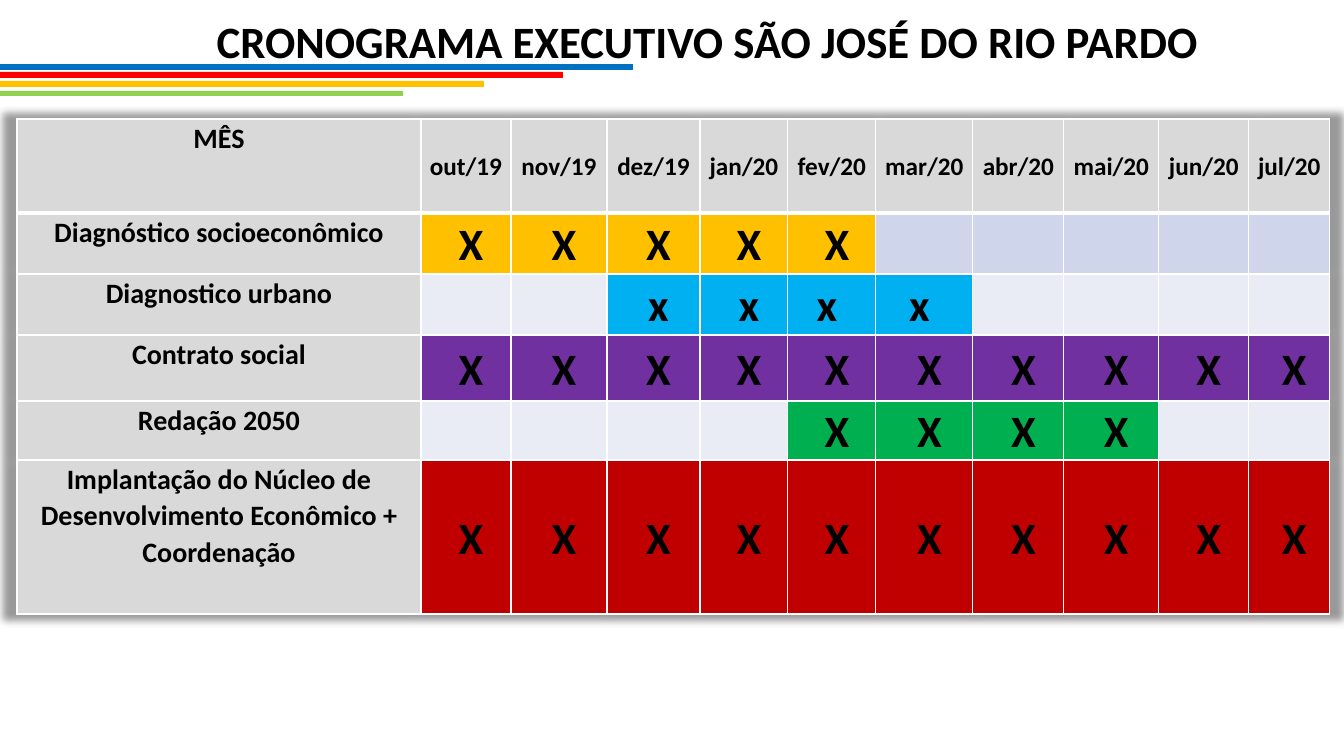
from lxml import etree
from pptx import Presentation
from pptx.dml.color import RGBColor
from pptx.enum.shapes import MSO_SHAPE
from pptx.enum.text import MSO_ANCHOR, MSO_AUTO_SIZE, PP_ALIGN
from pptx.oxml import parse_xml
from pptx.oxml.ns import nsdecls
from pptx.util import Emu, Pt

RECTANGLE = MSO_SHAPE.RECTANGLE
TOP, MIDDLE = MSO_ANCHOR.TOP, MSO_ANCHOR.MIDDLE
CENTER = PP_ALIGN.CENTER
NO_AUTOFIT = MSO_AUTO_SIZE.NONE

PX_PER_INCH = 100.8
FONT = "Calibri"
BLACK, WHITE, GREY = "000000", "FFFFFF", "D9D9D9"
CELL_MARGIN = 7
MARK_SHIFT = 10

STRIPES = [  # top, width, height, colour
    (64, 633, 6, "0070C0"),
    (72, 563, 6, "FF0000"),
    (81, 484, 6, "FFC000"),
    (91, 403, 5, "92D050"),
]
MONTHS = ["out/19", "nov/19", "dez/19", "jan/20", "fev/20",
          "mar/20", "abr/20", "mai/20", "jun/20", "jul/20"]
TASKS = [  # label, mark, first month, last month, colour, idle colour
    ("Diagnóstico socioeconômico", "X", 1, 5, "FFC000", "CFD5EA"),
    ("Diagnostico urbano", "x", 3, 6, "00B0F0", "E9EBF5"),
    ("Contrato social", "X", 1, 10, "7030A0", "CFD5EA"),
    ("Redação 2050", "X", 5, 8, "00B050", "E9EBF5"),
    ("Implantação do Núcleo de Desenvolvimento Econômico + Coordenação",
     "X", 1, 10, "C00000", "CFD5EA"),
]
COLUMN_WIDTHS = [404, 90, 96, 93, 88, 88, 97, 91, 95, 90, 81]
ROW_HEIGHTS = [94, 61, 61, 66, 59, 154]


def px(length):
    return Emu(round(length * 914400 / PX_PER_INCH))


def rgb(colour):
    return RGBColor.from_string(colour)


def format_paragraph(paragraph, size):
    paragraph.alignment = CENTER
    for run in paragraph.runs:
        run.font.name = FONT
        run.font.size = Pt(size)
        run.font.bold = True
        run.font.color.rgb = rgb(BLACK)


def add_stripes(slide, left):
    for top, width, height, colour in STRIPES:
        stripe = slide.shapes.add_shape(
            RECTANGLE, px(left), px(top), px(width), px(height))
        stripe.shadow.inherit = False
        stripe.fill.solid()
        stripe.fill.fore_color.rgb = rgb(colour)
        stripe.line.fill.background()


def place_title(slide, left, top, width, height):
    title = slide.shapes.title
    title.left, title.top = px(left), px(top)
    title.width, title.height = px(width), px(height)
    frame = title.text_frame
    frame.text = "CRONOGRAMA EXECUTIVO SÃO JOSÉ DO RIO PARDO"
    frame.auto_size = NO_AUTOFIT
    frame.vertical_anchor = MIDDLE
    format_paragraph(frame.paragraphs[0], 32)


def set_borders(cell, top_width, bottom_width):
    properties = cell._tc.get_or_add_tcPr()
    widths = {"lnL": 1, "lnR": 1, "lnT": top_width, "lnB": bottom_width}
    for tag, width in widths.items():
        properties.append(parse_xml(
            f'<a:{tag} {nsdecls("a")} w="{Pt(width)}"><a:solidFill>'
            f'<a:srgbClr val="{WHITE}"/></a:solidFill></a:{tag}>'))


def add_table_shadow(table):
    effects = parse_xml(
        f'<a:effectLst {nsdecls("a")}><a:outerShdw blurRad="63500" sx="102000" '
        'sy="102000" algn="ctr" rotWithShape="0"/></a:effectLst>')
    color = etree.SubElement(effects[0], effects[0].tag.replace("outerShdw", "prstClr"), val="black")
    etree.SubElement(color, color.tag.replace("prstClr", "alpha"), val="40000")
    table._tbl.tblPr.insert(0, effects)


def fill_cell(cell, colour, text="", size=20, anchor=MIDDLE, shift=0):
    cell.fill.solid()
    cell.fill.fore_color.rgb = rgb(colour)
    cell.margin_left, cell.margin_right = px(CELL_MARGIN + shift), px(CELL_MARGIN)
    cell.margin_top = cell.margin_bottom = 0
    cell.vertical_anchor = anchor
    if text:
        cell.text_frame.text = text
        paragraph = cell.text_frame.paragraphs[0]
        paragraph.line_spacing = 1.07
        format_paragraph(paragraph, size)


def add_schedule(slide, left, top):
    table = slide.shapes.add_table(
        len(ROW_HEIGHTS), len(COLUMN_WIDTHS), px(left), px(top),
        px(sum(COLUMN_WIDTHS)), px(sum(ROW_HEIGHTS))).table
    add_table_shadow(table)
    for column, width in zip(table.columns, COLUMN_WIDTHS):
        column.width = px(width)
    for index, (row, height) in enumerate(zip(table.rows, ROW_HEIGHTS)):
        row.height = px(height)
        for cell in row.cells:
            set_borders(cell, 3 if index == 1 else 1, 3 if index == 0 else 1)

    fill_cell(table.cell(0, 0), GREY, "MÊS", anchor=TOP)
    for column, month in enumerate(MONTHS, 1):
        fill_cell(table.cell(0, column), GREY, month, 18)
    for row, (label, mark, first, last, colour, idle) in enumerate(TASKS, 1):
        fill_cell(table.cell(row, 0), GREY, label, anchor=TOP)
        for column in range(1, len(MONTHS) + 1):
            cell = table.cell(row, column)
            if first <= column <= last:
                shifted_left = mark == "x" and column >= 5
                shift = 0 if shifted_left else MARK_SHIFT
                fill_cell(cell, colour, mark, 32, shift=shift)
                if shifted_left:
                    cell.margin_right = px(CELL_MARGIN + MARK_SHIFT)
            else:
                fill_cell(cell, idle)


def main():
    presentation = Presentation()
    presentation.slide_width, presentation.slide_height = px(1344), px(756)
    slide = presentation.slides.add_slide(presentation.slide_layouts[5])
    add_stripes(slide, 0)
    place_title(slide, 180, 13, 1055, 55)
    add_schedule(slide, 17, 119)
    presentation.save("out.pptx")


if __name__ == "__main__":
    main()
